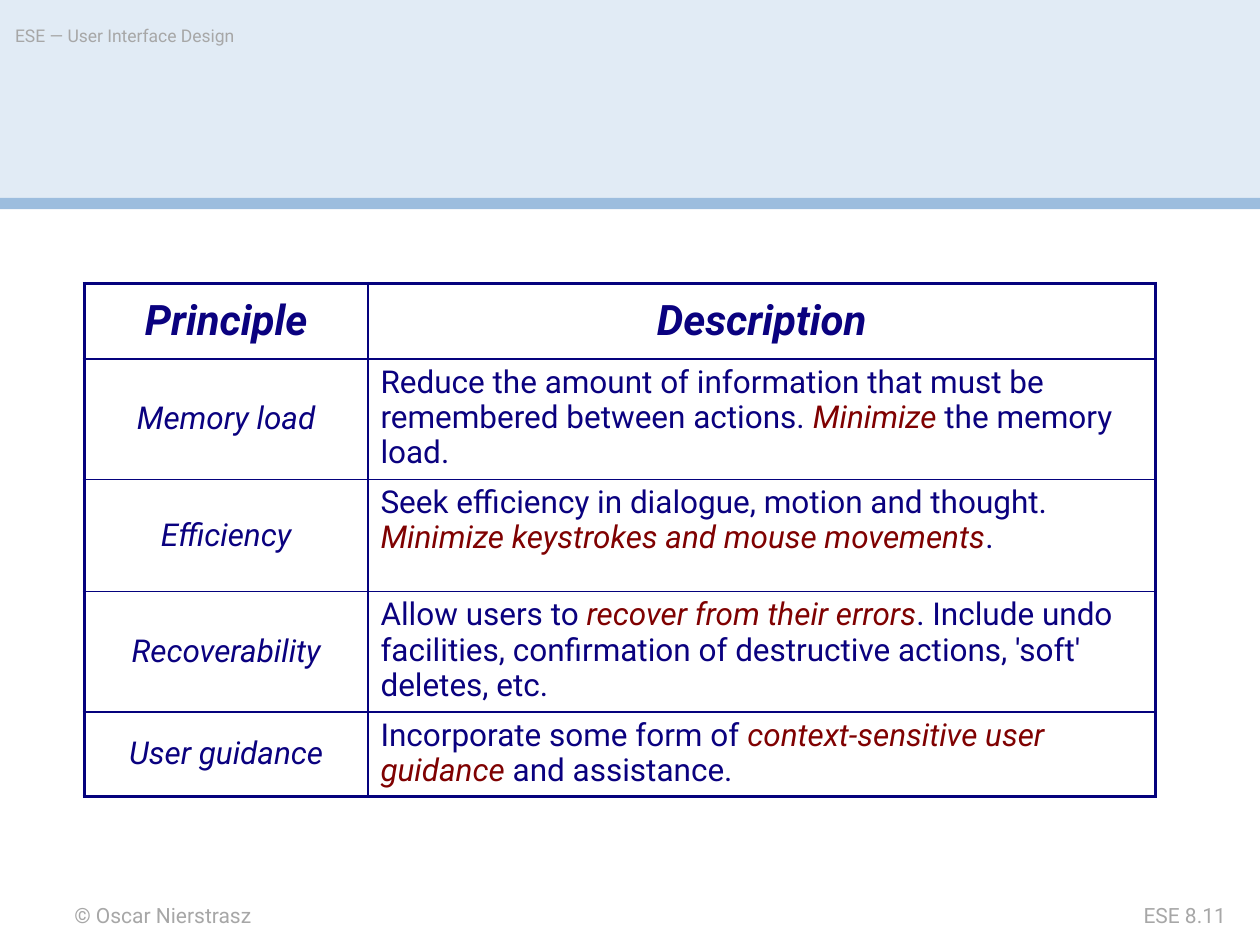
from pptx import Presentation
from pptx.dml.color import RGBColor
from pptx.enum.shapes import MSO_SHAPE
from pptx.enum.text import MSO_ANCHOR, PP_ALIGN
from pptx.oxml import parse_xml
from pptx.oxml.ns import nsdecls
from pptx.util import Inches, Pt

FONT = "Roboto"
NAVY, RED, GREY, BORDER = "0A017F", "7F0101", "A7A7A7", "05027D"
THICK, THIN = 2.25, 1

COLUMNS = [2.25, 6.25]
ROWS = [0.6, 0.94, 0.89, 0.94, 0.65]
HEADINGS = ["Principle", "Description"]
# Each description alternates plain and emphasised spans
PRINCIPLES = [
    ("Memory load", ["Reduce the amount of information that must be remembered "
                     "between actions. ", "Minimize", " the memory load."]),
    ("Efficiency", ["Seek efficiency in dialogue, motion and thought. ",
                    "Minimize keystrokes and mouse movements", "."]),
    ("Recoverability", ["Allow users to ", "recover from their errors",
                        ". Include undo facilities, confirmation of destructive "
                        "actions, 'soft' deletes, etc."]),
    ("User guidance", ["Incorporate some form of ",
                       "context-sensitive user guidance", " and assistance."]),
]


def color(value):
    return RGBColor.from_string(value)


def style(para, size, value, align=PP_ALIGN.LEFT):
    para.alignment = align
    para.font.name = FONT
    para.font.size = Pt(size)
    para.font.color.rgb = color(value)


def add_band(page, box, fill):
    band = page.shapes.add_shape(MSO_SHAPE.RECTANGLE, *map(Inches, box))
    band.shadow.inherit = False
    band.fill.solid()
    band.fill.fore_color.rgb = color(fill)
    band.line.fill.background()


def add_label(page, box, text, size, align=PP_ALIGN.LEFT):
    frame = page.shapes.add_textbox(*map(Inches, box)).text_frame
    frame.margin_left = frame.margin_right = 0
    frame.margin_top = frame.margin_bottom = 0
    frame.word_wrap = True
    para = frame.paragraphs[0]
    para.text = text
    style(para, size, GREY, align)


def set_borders(cell, widths):
    """Draw the cell's left, right, top and bottom lines."""
    properties = cell._tc.get_or_add_tcPr()
    for index, (side, width) in enumerate(zip("LRTB", widths)):
        line = parse_xml(
            f'<a:ln{side} {nsdecls("a")} w="{Pt(width)}"><a:solidFill>'
            f'<a:srgbClr val="{BORDER}"/></a:solidFill></a:ln{side}>')
        properties.insert(index, line)


def fill_cell(cell, spans, size, centred, bold=False, italic=False):
    para = cell.text_frame.paragraphs[0]
    style(para, size, NAVY, PP_ALIGN.CENTER if centred else PP_ALIGN.LEFT)
    para.line_spacing = 0.95
    para.font.bold = bold
    para.font.italic = italic
    cell.vertical_anchor = MSO_ANCHOR.MIDDLE if centred else MSO_ANCHOR.TOP
    for index, text in enumerate(spans):
        span = para.add_run()
        span.text = text
        if index % 2:
            span.font.italic = True
            span.font.color.rgb = color(RED)


def add_principles(page, left, top):
    table = page.shapes.add_table(
        len(ROWS), len(COLUMNS), Inches(left), Inches(top),
        Inches(sum(COLUMNS)), Inches(sum(ROWS))).table
    table.first_row = table.horz_banding = False
    for column, width in zip(table.columns, COLUMNS):
        column.width = Inches(width)
    for row, height in zip(table.rows, ROWS):
        row.height = Inches(height)

    # Text
    for index, heading in enumerate(HEADINGS):
        fill_cell(table.cell(0, index), [heading], 24, True, bold=True, italic=True)
    for index, (name, description) in enumerate(PRINCIPLES, 1):
        fill_cell(table.cell(index, 0), [name], 18, True, italic=True)
        fill_cell(table.cell(index, 1), description, 18, False)

    # Thick outer frame, thin inner lines
    last_row, last_column = len(ROWS) - 1, len(COLUMNS) - 1
    for r in range(len(ROWS)):
        for c in range(len(COLUMNS)):
            cell = table.cell(r, c)
            cell.fill.background()
            outer = (c == 0, c == last_column, r == 0, r == last_row)
            set_borders(cell, [THICK if edge else THIN for edge in outer])


def add_header(page, width):
    add_band(page, (0, 0, width, 1.58), "E1EBF5")
    add_band(page, (0, 1.57, width, 0.09), "9CBDDE")
    add_label(page, (0.12, 0.2, 5.9, 0.28), "ESE — User Interface Design", 10)


def add_footer(page, top):
    add_label(page, (0.59, top, 4.17, 0.2), "© Oscar Nierstrasz", 12)
    add_label(page, (8.25, top, 1.48, 0.2), "ESE 8.11", 12, PP_ALIGN.RIGHT)


def main():
    deck = Presentation()
    deck.slide_width, deck.slide_height = Inches(10), Inches(7.5)
    page = deck.slides.add_slide(deck.slide_layouts[6])
    add_header(page, 10)
    add_footer(page, 7.16)
    add_principles(page, 0.67, 2.25)
    deck.save("out.pptx")


if __name__ == "__main__":
    main()
